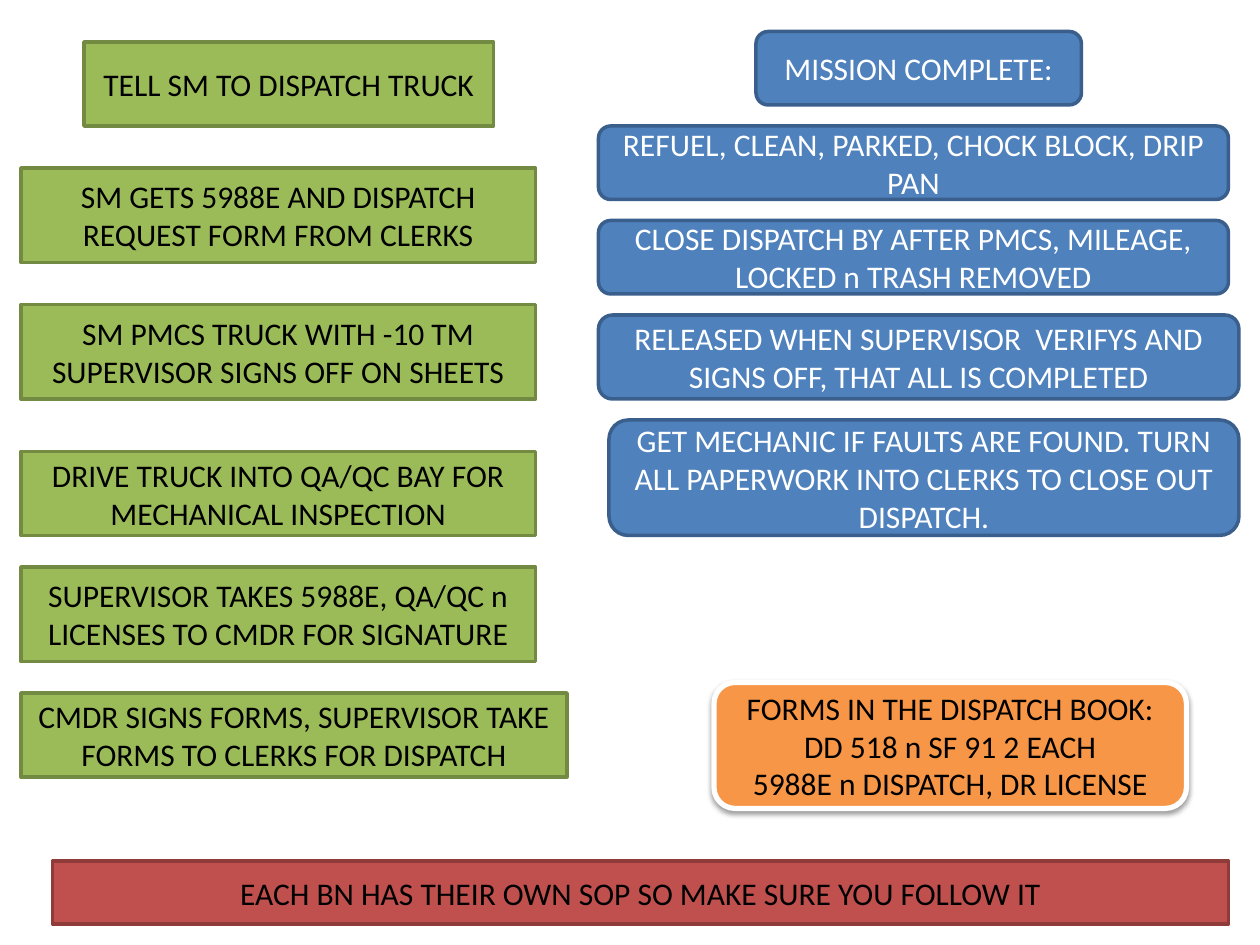
from dataclasses import dataclass

from lxml.etree import SubElement
from pptx import Presentation
from pptx.dml.color import RGBColor
from pptx.enum.shapes import MSO_SHAPE as Preset
from pptx.enum.text import MSO_ANCHOR as Anchor, PP_ALIGN as Align
from pptx.oxml.ns import qn
from pptx.shapes.autoshape import Shape
from pptx.slide import Slide
from pptx.util import Emu, Pt

EMU_PER_PX = 9525
SLIDE_WIDTH, SLIDE_HEIGHT = 960, 720
COMPLETION_TOP, COMPLETION_GAP = 24, 16

BLACK = RGBColor(0x00, 0x00, 0x00)
WHITE = RGBColor(0xFF, 0xFF, 0xFF)
GREEN = RGBColor(0x9B, 0xBB, 0x59)
DARK_GREEN = RGBColor(0x73, 0x8A, 0x42)
BLUE = RGBColor(0x4F, 0x81, 0xBD)
DARK_BLUE = RGBColor(0x3A, 0x5F, 0x8C)
RED = RGBColor(0xC0, 0x50, 0x4D)
DARK_RED = RGBColor(0x8E, 0x3B, 0x39)
ORANGE = RGBColor(0xF7, 0x96, 0x46)


@dataclass(frozen=True)
class Style:
    preset: Preset
    fill: RGBColor
    line: RGBColor
    text: RGBColor
    line_width: int = 2


@dataclass(frozen=True)
class Box:
    left: int
    top: int
    width: int
    height: int
    lines: tuple[str, ...]


@dataclass(frozen=True)
class Step:
    left: int
    width: int
    height: int
    text: str


DISPATCH_STYLE = Style(Preset.RECTANGLE, GREEN, DARK_GREEN, BLACK)
COMPLETION_STYLE = Style(Preset.ROUNDED_RECTANGLE, BLUE, DARK_BLUE, WHITE)
FORMS_STYLE = Style(Preset.ROUNDED_RECTANGLE, ORANGE, WHITE, BLACK, 3)
SOP_STYLE = Style(Preset.RECTANGLE, RED, DARK_RED, BLACK)

DISPATCH_BOXES = (
    Box(64, 32, 312, 64, ("TELL SM TO DISPATCH TRUCK",)),
    Box(16, 128, 392, 72, ("SM GETS 5988E AND DISPATCH REQUEST FORM FROM CLERKS",)),
    Box(16, 232, 392, 72, ("SM PMCS TRUCK WITH -10 TM", "SUPERVISOR SIGNS OFF ON SHEETS")),
    Box(16, 344, 392, 64, ("DRIVE TRUCK INTO QA/QC BAY FOR MECHANICAL INSPECTION",)),
    Box(16, 432, 392, 72, ("SUPERVISOR TAKES 5988E, QA/QC n LICENSES TO CMDR FOR SIGNATURE",)),
    Box(16, 528, 416, 64, ("CMDR SIGNS FORMS, SUPERVISOR TAKE FORMS TO CLERKS FOR DISPATCH",)),
)
COMPLETION_STEPS = (
    Step(576, 248, 56, "MISSION COMPLETE:"),
    Step(456, 480, 56, "REFUEL, CLEAN, PARKED, CHOCK BLOCK, DRIP PAN"),
    Step(456, 480, 56, "CLOSE DISPATCH BY AFTER PMCS, MILEAGE, LOCKED n TRASH REMOVED"),
    Step(456, 488, 64, "RELEASED WHEN SUPERVISOR  VERIFYS AND SIGNS OFF, THAT ALL IS COMPLETED"),
    Step(464, 480, 88, "GET MECHANIC IF FAULTS ARE FOUND. TURN ALL PAPERWORK INTO CLERKS "
                       "TO CLOSE OUT DISPATCH."),
)
FORMS_BOX = Box(544, 520, 360, 96, (
    "FORMS IN THE DISPATCH BOOK:",
    "DD 518 n SF 91 2 EACH",
    "5988E n DISPATCH, DR LICENSE",
))
SOP_BOX = Box(40, 656, 896, 48, ("EACH BN HAS THEIR OWN SOP SO MAKE SURE YOU FOLLOW IT",))


def px(length: int) -> Emu:
    return Emu(length * EMU_PER_PX)


def draw_box(slide: Slide, box: Box, style: Style) -> Shape:
    shape = slide.shapes.add_shape(
        style.preset, px(box.left), px(box.top), px(box.width), px(box.height))
    shape.shadow.inherit = False
    shape.fill.solid()
    shape.fill.fore_color.rgb = style.fill
    shape.line.color.rgb = style.line
    shape.line.width = Pt(style.line_width)
    frame = shape.text_frame
    frame.word_wrap = True
    frame.vertical_anchor = Anchor.MIDDLE
    frame.text = "\n".join(box.lines)
    font_format = {"name": "Calibri", "size": Pt(18)}
    for paragraph in frame.paragraphs:
        paragraph.alignment = Align.CENTER
        for attribute, value in font_format.items():
            setattr(paragraph.font, attribute, value)
        paragraph.font.color.rgb = style.text
    return shape


def add_shadow(shape: Shape) -> None:
    effects = shape.element.spPr.find(qn("a:effectLst"))
    shadow = SubElement(effects, qn("a:outerShdw"), {
        "blurRad": str(Pt(3.1)), "dist": str(Pt(1.6)),
        "dir": "5400000", "rotWithShape": "0"})
    color = SubElement(shadow, qn("a:srgbClr"), val=str(BLACK))
    SubElement(color, qn("a:alpha"), val="38000")


def draw_completion_steps(slide: Slide) -> None:
    top = COMPLETION_TOP
    for step in COMPLETION_STEPS:
        box = Box(step.left, top, step.width, step.height, (step.text,))
        draw_box(slide, box, COMPLETION_STYLE)
        top += step.height + COMPLETION_GAP


def main() -> None:
    presentation = Presentation()
    presentation.slide_width = px(SLIDE_WIDTH)
    presentation.slide_height = px(SLIDE_HEIGHT)
    slide = presentation.slides.add_slide(presentation.slide_layouts[6])
    for box in DISPATCH_BOXES:
        draw_box(slide, box, DISPATCH_STYLE)
    draw_completion_steps(slide)
    add_shadow(draw_box(slide, FORMS_BOX, FORMS_STYLE))
    draw_box(slide, SOP_BOX, SOP_STYLE)
    presentation.save("out.pptx")


if __name__ == "__main__":
    main()
